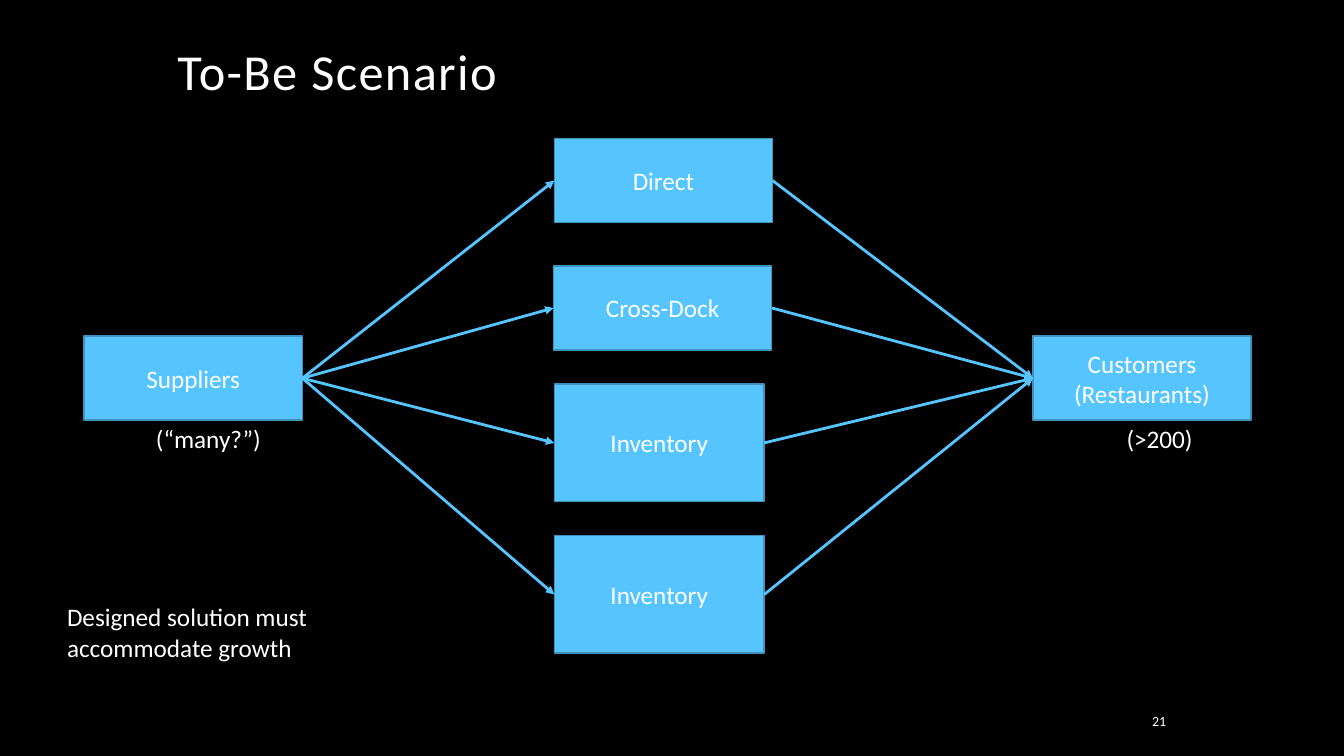
from dataclasses import dataclass

from lxml.etree import SubElement
from pptx import Presentation
from pptx.dml.color import RGBColor
from pptx.enum.shapes import MSO_CONNECTOR, MSO_SHAPE
from pptx.enum.text import MSO_ANCHOR, PP_ALIGN
from pptx.oxml.ns import qn
from pptx.shapes.autoshape import Shape
from pptx.slide import Slide
from pptx.text.text import TextFrame
from pptx.util import Cm, Pt


@dataclass(frozen=True)
class Theme:
    font: str = "Calibri"
    background: RGBColor = RGBColor(0x00, 0x00, 0x00)
    text: RGBColor = RGBColor(0xFF, 0xFF, 0xFF)
    accent: RGBColor = RGBColor(0x56, 0xC5, 0xFF)
    outline: RGBColor = RGBColor(0x40, 0x92, 0xBD)
    title_size: int = 36
    body_size: int = 18
    number_size: int = 10
    outline_width: int = 1
    arrow_width: int = 2


@dataclass(frozen=True)
class Node:
    text: str
    left: float
    top: float
    width: float = 5.5
    height: float = 2.12


@dataclass(frozen=True)
class Label:
    text: str
    left: float
    top: float
    width: float
    height: float
    size: int
    wrap: bool = True
    align: PP_ALIGN = PP_ALIGN.LEFT
    anchor: MSO_ANCHOR = MSO_ANCHOR.TOP
    line_spacing: float = 1.0
    letter_spacing: int = 0


THEME = Theme()
LEFT_SITE, RIGHT_SITE = 1, 3

SUPPLIERS = Node("Suppliers", 2.12, 8.47)
CUSTOMERS = Node("Customers (Restaurants)", 26.03, 8.47)
ROUTES = [
    Node("Direct", 13.97, 3.49),
    Node("Cross-Dock", 13.95, 6.7),
    Node("Inventory", 13.97, 9.68, 5.29, 2.96),
    Node("Inventory", 13.97, 13.5, 5.29, 2.96),
]
LABELS = [
    Label("To-Be Scenario", 4.22, 1.06, 25.4, 3.81, THEME.title_size,
          line_spacing=0.9, letter_spacing=100),
    Label("(“many?”)", 3.68, 10.54, 3.15, 1.03, THEME.body_size, wrap=False),
    Label("(>200)", 28.14, 10.54, 2.2, 1.03, THEME.body_size, wrap=False),
    Label("Designed solution must accommodate growth", 1.44, 15.04, 8.08, 1.8,
          THEME.body_size),
    Label("21", 27.3, 17.78, 2.34, 0.76, THEME.number_size,
          align=PP_ALIGN.RIGHT, anchor=MSO_ANCHOR.MIDDLE),
]


def write_text(text_frame: TextFrame, text: str, size: int, align: PP_ALIGN,
               anchor: MSO_ANCHOR) -> None:
    """Fill a text frame with one paragraph in the theme font."""
    text_frame.text = text
    text_frame.vertical_anchor = anchor
    paragraph = text_frame.paragraphs[0]
    paragraph.alignment = align
    font = paragraph.runs[0].font
    font.name = THEME.font
    font.size = Pt(size)
    font.color.rgb = THEME.text


def draw_node(slide: Slide, node: Node) -> Shape:
    """Draw a box of the supply network."""
    shape = slide.shapes.add_shape(MSO_SHAPE.RECTANGLE, Cm(node.left), Cm(node.top),
                                   Cm(node.width), Cm(node.height))
    shape.shadow.inherit = False
    shape.fill.solid()
    shape.fill.fore_color.rgb = THEME.accent
    shape.line.color.rgb = THEME.outline
    shape.line.width = Pt(THEME.outline_width)
    write_text(shape.text_frame, node.text, THEME.body_size, PP_ALIGN.CENTER,
               MSO_ANCHOR.MIDDLE)
    return shape


def draw_arrow(slide: Slide, source: Shape, target: Shape) -> None:
    """Connect the right side of one box to the left side of another."""
    connector = slide.shapes.add_connector(MSO_CONNECTOR.STRAIGHT, 0, 0, 0, 0)
    connector.begin_connect(source, RIGHT_SITE)
    connector.end_connect(target, LEFT_SITE)
    connector.line.color.rgb = THEME.accent
    connector.line.width = Pt(THEME.arrow_width)
    properties = connector.element.spPr
    SubElement(properties.find(qn("a:ln")), qn("a:tailEnd"), type="triangle")
    SubElement(properties, qn("a:effectLst"))


def draw_label(slide: Slide, label: Label) -> None:
    """Draw a free-standing piece of text."""
    box = slide.shapes.add_textbox(Cm(label.left), Cm(label.top),
                                   Cm(label.width), Cm(label.height))
    text_frame = box.text_frame
    text_frame.word_wrap = label.wrap
    write_text(text_frame, label.text, label.size, label.align, label.anchor)
    paragraph = text_frame.paragraphs[0]
    paragraph.line_spacing = label.line_spacing
    if label.letter_spacing:
        run_properties = paragraph.runs[0]._r.get_or_add_rPr()
        run_properties.set("spc", str(label.letter_spacing))


def main() -> None:
    """Build the scenario slide and save it."""
    presentation = Presentation()
    presentation.slide_width = Cm(33.87)
    presentation.slide_height = Cm(19.05)
    slide = presentation.slides.add_slide(presentation.slide_layouts[6])
    slide.background.fill.solid()
    slide.background.fill.fore_color.rgb = THEME.background

    suppliers = draw_node(slide, SUPPLIERS)
    customers = draw_node(slide, CUSTOMERS)
    for route in ROUTES:
        route_shape = draw_node(slide, route)
        draw_arrow(slide, suppliers, route_shape)
        draw_arrow(slide, route_shape, customers)
    for label in LABELS:
        draw_label(slide, label)

    presentation.save("out.pptx")


if __name__ == "__main__":
    main()
